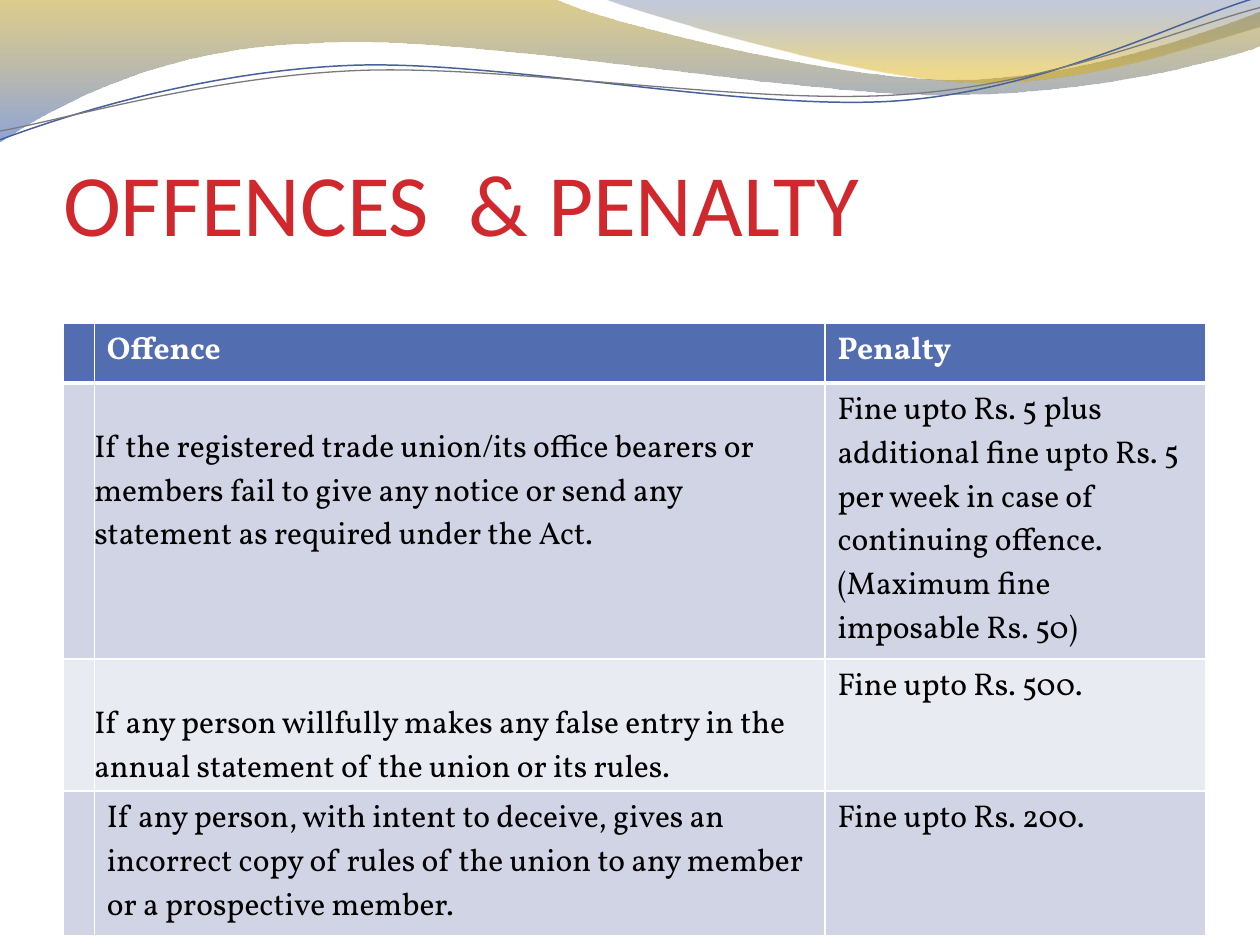
from math import cos, radians, sin

from lxml import etree
from pptx import Presentation
from pptx.dml.color import RGBColor
from pptx.enum.text import MSO_ANCHOR, MSO_AUTO_SIZE, PP_ALIGN
from pptx.oxml import parse_xml
from pptx.oxml.ns import nsdecls, qn
from pptx.util import Cm, Pt

RED = RGBColor(0xD1, 0x28, 0x2E)
WHITE = RGBColor(0xFF, 0xFF, 0xFF)
BLACK = RGBColor(0, 0, 0)
HEADER = RGBColor(0x52, 0x6D, 0xB0)
BAND_DARK = RGBColor(0xD1, 0xD4, 0xE4)
BAND_LIGHT = RGBColor(0xE9, 0xEB, 0xF2)
GOLD = RGBColor(0xB6, 0x90, 0x00)
YELLOW = RGBColor(0xD9, 0xAC, 0x00)
BLUE = RGBColor(0x33, 0x59, 0xB7)
NAVY = RGBColor(0x32, 0x4C, 0x8D)
LINE_BLUE = RGBColor(0x48, 0x60, 0x9B)
LINE_GREY = RGBColor(0x7A, 0x7A, 0x7A)

STRAND_TILT = -2.7  # degrees

# Boxes and outlines in tenths of the banner width. An outline is a start
# point, then lines (2 numbers) and cubic curves (6 numbers); gradient
# stops are (position %, colour, opacity %)
WAVES = [
    ((-0.01, -0.01, 10.02, 1.14),
     [(0, 0), (4.4, -0.01), (4.76, 0.17, 6.64, 0.63, 7.58, 0.63),
      (8.53, 0.63, 9.58, 0.26, 10, 0.09), (10.01, 0.36),
      (9.83, 0.44, 8.7, 0.76, 7.46, 0.75), (6.22, 0.75, 3.82, 0.28, 2.57, 0.34),
      (1.29, 0.36, 0.46, 0.83, -0.01, 1.13), (0, 0)],
     [(0, GOLD, 45), (100, BLUE, 55)]),
    ((4.79, -0.01, 5.21, 0.7),
     [(4.79, -0.01), (5.09, 0.11, 6.82, 0.62, 7.69, 0.65),
      (8.56, 0.69, 9.61, 0.32, 10, 0.21), (10, 0), (4.79, -0.01)],
     [(0, NAVY, 30), (80, YELLOW, 45)]),
]
STRANDS = [
    ((-0.02, 0.22, 10.02, 0.71),
     [(0, 1.11), (0.48, 0.93, 1.58, 0.57, 2.77, 0.52),
      (3.95, 0.47, 5.93, 0.89, 7.13, 0.8), (8.33, 0.71, 9.38, 0.15, 9.98, -0.02)],
     LINE_BLUE, 0.85),
    ((-0.02, 0.3, 10.03, 0.58),
     [(0, 1.04), (0.47, 0.96, 1.64, 0.61, 2.83, 0.56),
      (4.03, 0.51, 5.97, 0.84, 7.17, 0.75), (8.36, 0.67, 9.41, 0.21, 10, 0.06)],
     LINE_GREY, 0.75),
]

# Each row: offence, penalty, whether the offence sits flush and one line lower
ROWS = [
    ("If the registered trade union/its office bearers or members fail to give "
     "any notice or send any statement as required under the Act.",
     "Fine upto Rs. 5 plus additional fine upto Rs. 5 per week in case of "
     "continuing offence. (Maximum fine imposable Rs. 50)", True),
    ("If any person willfully makes any false entry in the annual statement of "
     "the union or its rules.", "Fine upto Rs. 500.", True),
    ("If any person, with intent to deceive, gives an incorrect copy of rules of "
     "the union to any member or a prospective member.",
     "Fine upto Rs. 200.", False),
]


def write(tf, text, font="Vollkorn", size=18, color=BLACK, bold=False):
    p = tf.paragraphs[0]
    p.alignment = PP_ALIGN.LEFT
    r = p.add_run()
    r.text = text
    r.font.name, r.font.size, r.font.bold = font, Pt(size), bold
    r.font.color.rgb = color


def add_outline(s, box, outline, left, top, unit, tilt=0, close=False):
    """Draw lines and curves in a box that is turned by tilt degrees."""
    x, y, w, h = box
    corners = [(left + (x + dx) * unit, top + (y + dy) * unit)
               for dx, dy in ((0, 0), (w, 0), (w, h))]
    builder = s.shapes.build_freeform(*corners[0])
    builder.add_line_segments(corners[1:], close=close)
    sp = builder.convert_to_shape()
    sp.shadow.inherit = False
    sp.rotation = tilt % 360

    c, n = cos(radians(-tilt)), sin(radians(-tilt))
    path = sp._element.spPr.find(".//" + qn("a:path"))
    for old in list(path):
        path.remove(old)
    for i, seg in enumerate(outline):
        tag = "moveTo" if i == 0 else "lnTo" if len(seg) == 2 else "cubicBezTo"
        step = etree.SubElement(path, qn(f"a:{tag}"))
        for px, py in zip(seg[::2], seg[1::2]):
            dx, dy = px - x - w / 2, py - y - h / 2
            etree.SubElement(step, qn("a:pt"),
                             x=str(round((dx * c - dy * n + w / 2) * unit)),
                             y=str(round((dx * n + dy * c + h / 2) * unit)))
    if close:
        etree.SubElement(path, qn("a:close"))
    return sp


def fill_gradient(sp, stops):
    gs = "".join(f'<a:gs pos="{pos * 1000}"><a:srgbClr val="{color}">'
                 f'<a:alpha val="{alpha * 1000}"/></a:srgbClr></a:gs>'
                 for pos, color, alpha in stops)
    grad = parse_xml(f'<a:gradFill {nsdecls("a")}><a:gsLst>{gs}</a:gsLst>'
                     '<a:lin ang="5400000" scaled="0"/></a:gradFill>')
    sp._element.spPr.find(qn("a:custGeom")).addnext(grad)


def add_banner(s, left, top, width):
    unit = width / 10
    parts = []
    for box, outline, stops in WAVES:
        sp = add_outline(s, box, outline, left, top, unit, close=True)
        fill_gradient(sp, stops)
        sp.line.fill.background()
        parts.append(sp)
    for box, outline, color, weight in STRANDS:
        sp = add_outline(s, box, outline, left, top, unit, tilt=STRAND_TILT)
        sp.fill.background()
        sp.line.color.rgb, sp.line.width = color, Pt(weight)
        parts.append(sp)
    for sp in parts:  # the banner belongs to the layout
        s.slide_layout.shapes._spTree.append(sp._element)


def add_title(s, left, top, width, height):
    title = s.shapes.title
    title.left, title.top, title.width, title.height = left, top, width, height
    tf = title.text_frame
    tf.auto_size = MSO_AUTO_SIZE.NONE
    tf.vertical_anchor = MSO_ANCHOR.BOTTOM
    tf.margin_left = tf.margin_right = tf.margin_bottom = 0
    write(tf, "OFFENCES  & PENALTY", font="Calibri", size=50, color=RED)


def style_cell(cell, fill, top=1, bottom=1):
    cell.fill.solid()
    cell.fill.fore_color.rgb = fill
    tcPr = cell._tc.get_or_add_tcPr()
    for i, (side, weight) in enumerate(zip("LRTB", (1, 1, top, bottom))):
        ln = etree.Element(qn(f"a:ln{side}"), w=str(Pt(weight)))
        solid = etree.SubElement(ln, qn("a:solidFill"))
        etree.SubElement(solid, qn("a:srgbClr"), val=str(WHITE))
        tcPr.insert(i, ln)


def add_penalty_table(s, left, top, width, height):
    table = s.shapes.add_table(len(ROWS) + 1, 3, left, top, width, height).table
    number_w, penalty_w = Cm(0.63), Cm(7.68)
    widths = (number_w, width - number_w - penalty_w, penalty_w)
    for column, w in zip(table.columns, widths):
        column.width = w
    for i, row in enumerate(table.rows):
        row.height = Cm(2.26) if i else Cm(1.2)

    # Header
    for cell, text in zip(table.rows[0].cells, ("", "Offence", "Penalty")):
        style_cell(cell, HEADER, bottom=3)
        if text:
            write(cell.text_frame, text, color=WHITE, bold=True)

    # Offences
    for i, (offence, penalty, lowered) in enumerate(ROWS, 1):
        for j in range(3):
            style_cell(table.cell(i, j), BAND_DARK if i % 2 else BAND_LIGHT,
                       top=3 if i == 1 else 1)
        cell = table.cell(i, 1)
        write(cell.text_frame, offence)
        write(table.cell(i, 2).text_frame, penalty)
        if lowered:
            cell.margin_left = cell.margin_right = cell.margin_bottom = 0
            cell.margin_top = Cm(0.89)


def main():
    prs = Presentation()
    prs.slide_width, prs.slide_height = Cm(25.4), Cm(19.05)
    s = prs.slides.add_slide(prs.slide_layouts[5])
    add_banner(s, 0, 0, prs.slide_width)
    add_title(s, Cm(1.27), Cm(1.95), Cm(22.86), Cm(3.17))
    add_penalty_table(s, Cm(1.27), Cm(6.52), Cm(23.04), Cm(7.98))
    prs.save("out.pptx")


if __name__ == "__main__":
    main()
